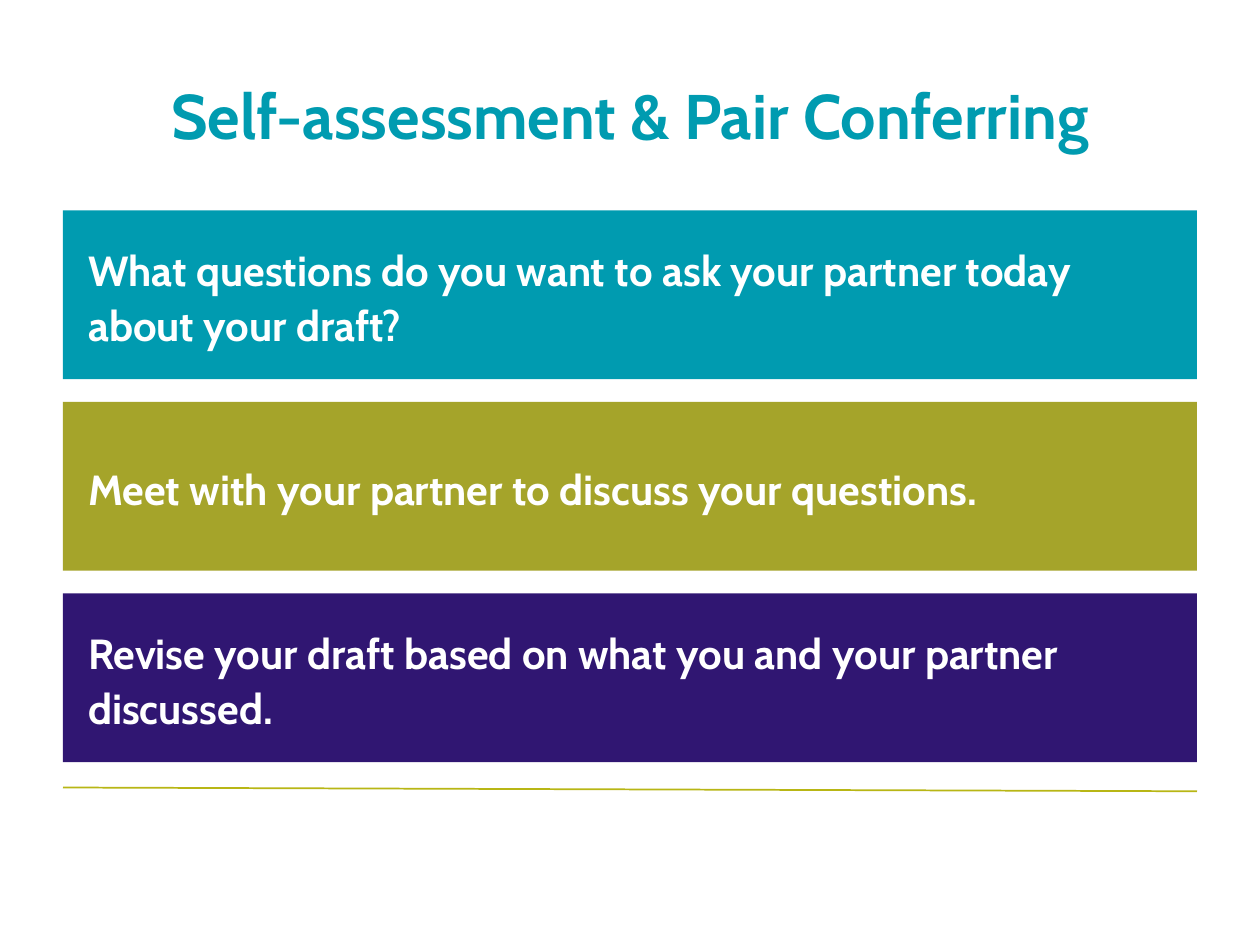
from dataclasses import dataclass

from lxml.etree import SubElement
from pptx import Presentation
from pptx.dml.color import RGBColor
from pptx.enum.shapes import MSO_CONNECTOR, MSO_SHAPE
from pptx.enum.text import MSO_ANCHOR, PP_ALIGN
from pptx.oxml.ns import qn
from pptx.util import Inches, Pt

# Content
TITLE = "Self-assessment & Pair Conferring"
STEPS = [
    ("What questions do you want to ask your partner today about your draft?", "teal"),
    ("Meet with your partner to discuss your questions.", "olive"),
    ("Revise your draft based on what you and your partner discussed.", "purple"),
]


@dataclass(frozen=True)
class Theme:
    font: str = "Cabin"
    title_size: int = 36
    step_size: int = 24
    teal: str = "009BB0"
    olive: str = "A5A42A"
    purple: str = "301672"
    rule: str = "B8B615"
    white: str = "FFFFFF"


THEME = Theme()

# Layout in inches: one column, three equal rows
SLIDE_WIDTH, SLIDE_HEIGHT = 10, 7.5
MARGIN = SLIDE_WIDTH * 0.05
COLUMN_WIDTH = SLIDE_WIDTH - 2 * MARGIN
TITLE_TOP, TITLE_HEIGHT = 0.34, 1.14
FIRST_ROW_TOP, ROW_HEIGHT, ROW_GAP = 1.67, 1.34, 0.18
RULE_START, RULE_END = 6.25, 6.28


def write_text(shape, text, size, color, alignment, inset_x, inset_y):
    frame = shape.text_frame
    frame.word_wrap = True
    frame.vertical_anchor = MSO_ANCHOR.MIDDLE
    frame.margin_left = frame.margin_right = Inches(inset_x)
    frame.margin_top = frame.margin_bottom = Inches(inset_y)
    paragraph = frame.paragraphs[0]
    paragraph.alignment = alignment
    run = paragraph.add_run()
    run.text = text
    run.font.name = THEME.font
    run.font.size = Pt(size)
    run.font.bold = True
    run.font.color.rgb = RGBColor.from_string(color)
    return paragraph


def add_rule(slide):
    rule = slide.shapes.add_connector(
        MSO_CONNECTOR.STRAIGHT, Inches(MARGIN), Inches(RULE_START),
        Inches(MARGIN + COLUMN_WIDTH), Inches(RULE_END))
    rule.line.color.rgb = RGBColor.from_string(THEME.rule)
    rule.line.width = Pt(1)
    SubElement(rule._element.spPr, qn("a:effectLst"))


def add_title(slide):
    box = slide.shapes.add_textbox(
        Inches(MARGIN), Inches(TITLE_TOP), Inches(COLUMN_WIDTH), Inches(TITLE_HEIGHT))
    write_text(box, TITLE, THEME.title_size, THEME.teal, PP_ALIGN.CENTER, 0.1, 0.05)


def add_step(slide, row, text, color_name):
    top = FIRST_ROW_TOP + row * (ROW_HEIGHT + ROW_GAP)
    bar = slide.shapes.add_shape(
        MSO_SHAPE.RECTANGLE, Inches(MARGIN), Inches(top),
        Inches(COLUMN_WIDTH), Inches(ROW_HEIGHT))
    bar.shadow.inherit = False
    bar.fill.solid()
    bar.fill.fore_color.rgb = RGBColor.from_string(getattr(THEME, color_name))
    bar.line.fill.background()
    paragraph = write_text(
        bar, text, THEME.step_size, THEME.white, PP_ALIGN.LEFT, 0.2, 0.2)
    paragraph.line_spacing = 1.1


def main():
    presentation = Presentation()
    presentation.slide_width = Inches(SLIDE_WIDTH)
    presentation.slide_height = Inches(SLIDE_HEIGHT)
    slide = presentation.slides.add_slide(presentation.slide_layouts[6])
    add_rule(slide)
    add_title(slide)
    for row, (text, color_name) in enumerate(STEPS):
        add_step(slide, row, text, color_name)
    presentation.save("out.pptx")


if __name__ == "__main__":
    main()
